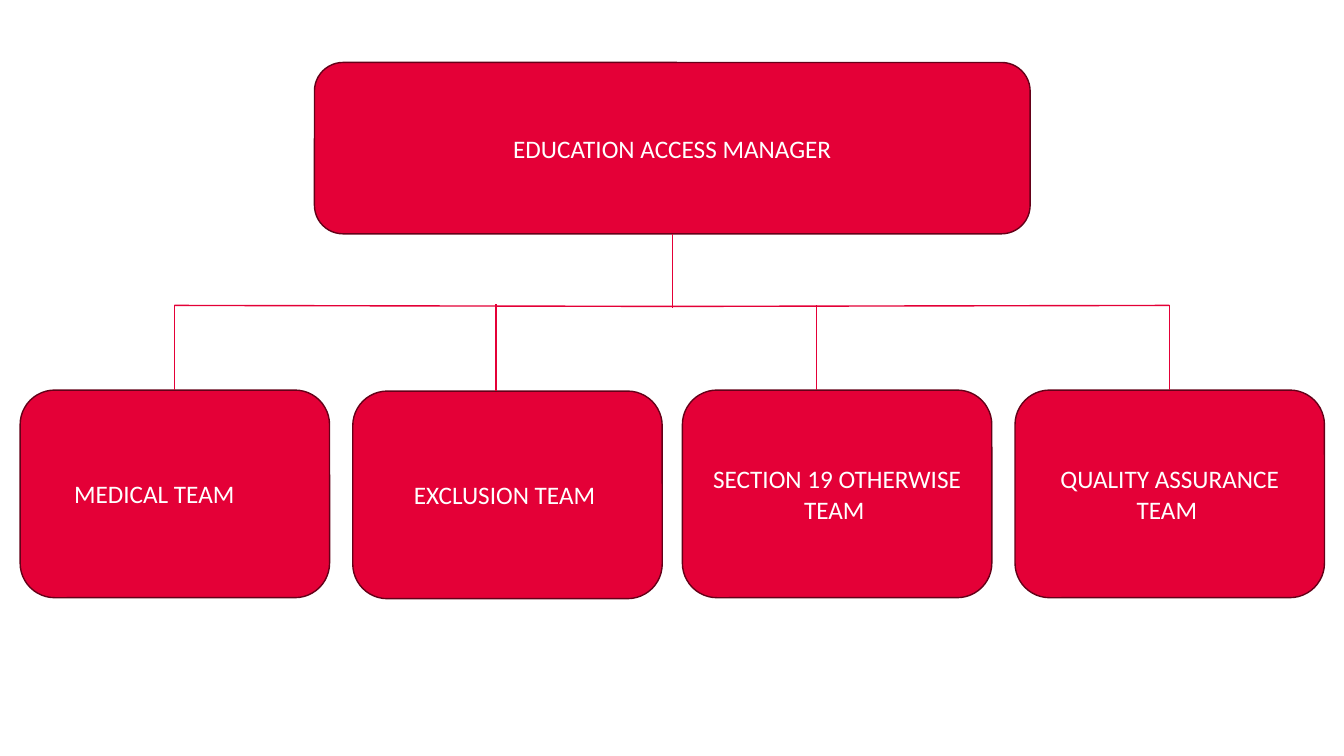
"""Builds a one-slide organisation chart of the education access teams."""
from lxml.etree import SubElement
from pptx import Presentation
from pptx.dml.color import RGBColor
from pptx.enum.shapes import MSO_CONNECTOR, MSO_SHAPE
from pptx.enum.text import MSO_ANCHOR, PP_ALIGN
from pptx.oxml.ns import qn
from pptx.util import Pt

RED = RGBColor(0xE4, 0x00, 0x37)
DARK_RED = RGBColor(0x64, 0x00, 0x18)
WHITE = RGBColor(0xFF, 0xFF, 0xFF)

CENTRE = 480.24
MANAGER_TOP, MANAGER_WIDTH, MANAGER_HEIGHT = 44.64, 511.2, 122.4
TEAM_WIDTH, TEAM_HEIGHT = 221.04, 148.32
BAR_TOP, BAR_MIDDLE = 218.16, 218.88

# Label, box left, box top, branch position, branch top
TEAMS = [
    ("MEDICAL TEAM\t", 14.4, 278.64, 124.56, BAR_TOP),
    ("EXCLUSION TEAM ", 252, 279.36, 354.24, 217.44),
    ("SECTION 19 OTHERWISE TEAM ", 487.44, 278.64, 583.2, BAR_TOP),
    ("QUALITY ASSURANCE TEAM ", 725.04, 278.64, 835.2, BAR_TOP),
]


def add_box(page, label, left, top, width, height):
    """Add a red rounded box with a centred white label."""
    box = page.shapes.add_shape(
        MSO_SHAPE.ROUNDED_RECTANGLE, Pt(left), Pt(top), Pt(width), Pt(height)
    )
    box.shadow.inherit = False
    box.fill.solid()
    box.fill.fore_color.rgb = RED
    box.line.color.rgb = DARK_RED
    box.line.width = Pt(1)
    frame = box.text_frame
    frame.word_wrap = True
    frame.vertical_anchor = MSO_ANCHOR.MIDDLE
    para = frame.paragraphs[0]
    para.alignment = PP_ALIGN.CENTER
    span = para.add_run()
    span.text = label
    span.font.name = "Calibri"
    span.font.size = Pt(18)
    span.font.color.rgb = WHITE


def add_line(page, start_x, start_y, end_x, end_y):
    """Add a thin red straight connector."""
    line = page.shapes.add_connector(
        MSO_CONNECTOR.STRAIGHT, Pt(start_x), Pt(start_y), Pt(end_x), Pt(end_y)
    )
    line.line.color.rgb = RED
    line.line.width = Pt(1)
    SubElement(line._element.spPr, qn("a:effectLst"))


def main():
    """Build the chart and save the deck."""
    deck = Presentation()
    deck.slide_width, deck.slide_height = Pt(960), Pt(540)
    page = deck.slides.add_slide(deck.slide_layouts[6])

    manager_left = CENTRE - MANAGER_WIDTH / 2
    add_box(page, "EDUCATION ACCESS MANAGER", manager_left, MANAGER_TOP,
            MANAGER_WIDTH, MANAGER_HEIGHT)
    for label, left, top, branch_x, branch_top in TEAMS:
        add_box(page, label, left, top, TEAM_WIDTH, TEAM_HEIGHT)
        add_line(page, branch_x, branch_top, branch_x, top)

    add_line(page, CENTRE, MANAGER_TOP + MANAGER_HEIGHT, CENTRE, 220.32)
    for team in (TEAMS[0], TEAMS[-1]):
        add_line(page, CENTRE, BAR_MIDDLE, team[3], BAR_TOP)

    deck.save("out.pptx")


if __name__ == "__main__":
    main()
